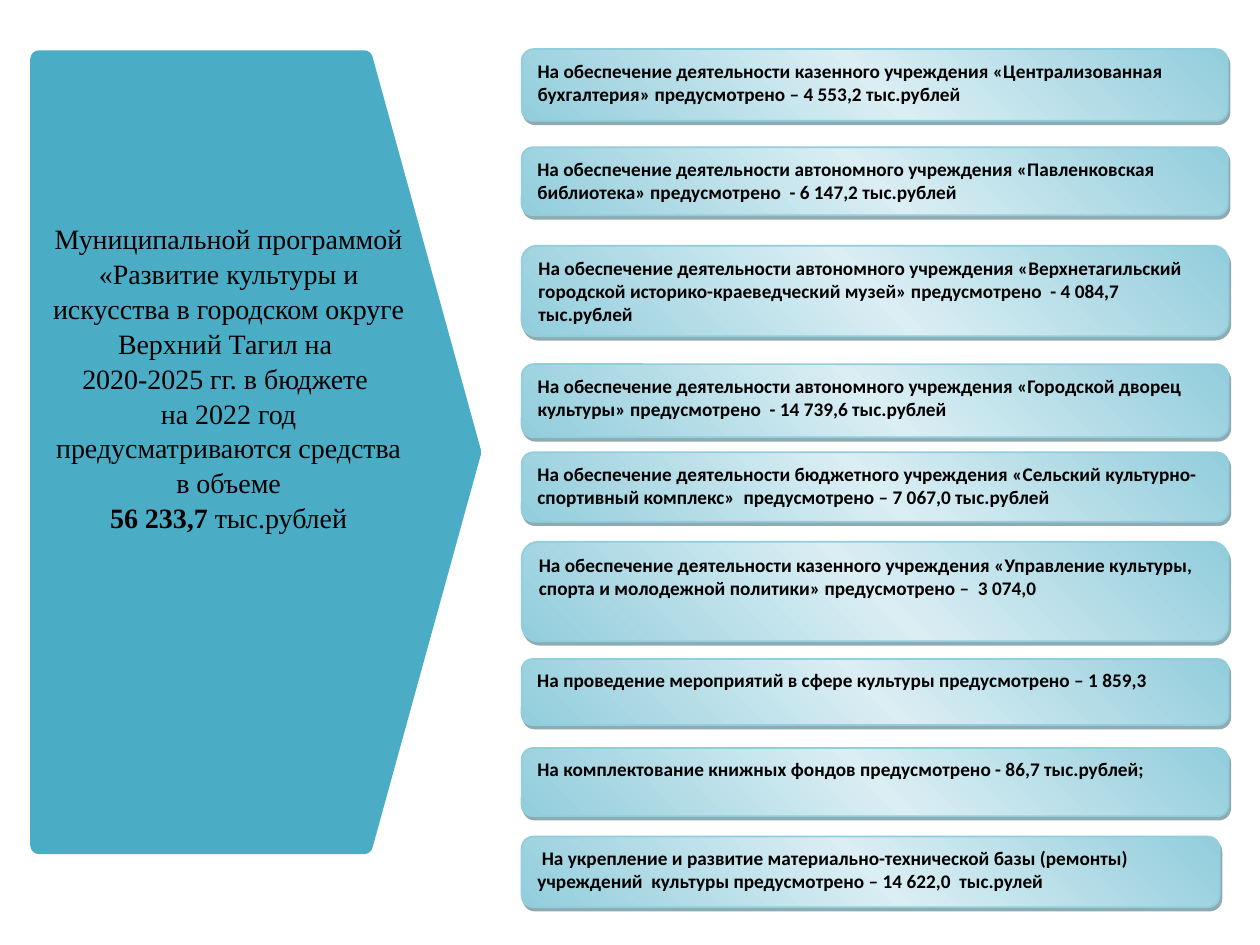
import pptx
import pptx.util
import pptx.oxml
import pptx.oxml.ns
import pptx.dml.color
import pptx.enum.shapes
import pptx.enum.text
from dataclasses import dataclass

Pt = pptx.util.Pt
Kind = pptx.enum.shapes.MSO_SHAPE
Align = pptx.enum.text.PP_ALIGN
Anchor = pptx.enum.text.MSO_ANCHOR


@dataclass
class Theme:
    plate: str = "4BACC6"
    edge: str = "92CDDC"
    glow: str = "DAEEF3"
    shade: str = "205867"
    ink: str = "000000"
    serif: str = "Times New Roman"
    sans: str = "Calibri"
    large: int = 16
    small: int = 11


theme = Theme()

total = [
    [("Муниципальной программой «Развитие культуры и искусства в городском округе Верхний Тагил на ", False)],
    [("2020-2025 гг. в бюджете ", False)],
    [("на 2022 год предусматриваются средства в объеме", False)],
    [("56 233,7 ", True), ("тыс.рублей", False)],
]

# top, height, width, text
items = [
    (28.1, 41, 403.5, "На обеспечение деятельности казенного учреждения «Централизованная бухгалтерия» предусмотрено – 4 553,2 тыс.рублей"),
    (84.2, 38.9, 403.5, "На обеспечение деятельности автономного учреждения «Павленковская библиотека» предусмотрено  - 6 147,2 тыс.рублей"),
    (140.4, 51.8, 403.9, "На обеспечение деятельности автономного учреждения «Верхнетагильский городской историко-краеведческий музей» предусмотрено  - 4 084,7 тыс.рублей"),
    (208.1, 41.8, 403.9, "На обеспечение деятельности автономного учреждения «Городской дворец культуры» предусмотрено  - 14 739,6 тыс.рублей"),
    (258.5, 39.6, 403.9, "На обеспечение деятельности бюджетного учреждения «Сельский культурно-спортивный комплекс»  предусмотрено – 7 067,0 тыс.рублей"),
    (309.6, 56.9, 403.9, "На обеспечение деятельности казенного учреждения «Управление культуры, спорта и молодежной политики» предусмотрено –  3 074,0"),
    (376.6, 37.7, 403.9, "На проведение мероприятий в сфере культуры предусмотрено – 1 859,3"),
    (427.5, 38.9, 403.9, "На комплектование книжных фондов предусмотрено - 86,7 тыс.рублей;"),
    (478.1, 40.3, 398.9, " На укрепление и развитие материально-технической базы (ремонты) учреждений  культуры предусмотрено – 14 622,0  тыс.рулей"),
]


def color(code):
    return pptx.dml.color.RGBColor.from_string(code)


def xml(tag, body):
    space = pptx.oxml.ns.nsdecls("a")
    return pptx.oxml.parse_xml(f"<a:{tag} {space}>{body}</a:{tag}>")


def add(slide, kind, box, line, width):
    shape = slide.shapes.add_shape(kind, *map(Pt, box))
    shape.shadow.inherit = False
    shape.line.color.rgb = color(line)
    shape.line.width = Pt(width)
    frame = shape.text_frame
    frame.word_wrap = True
    frame.vertical_anchor = Anchor.TOP
    return shape


def style(par, name, size, align):
    par.alignment = align
    par.font.name = name
    par.font.size = Pt(size)
    par.font.color.rgb = color(theme.ink)


def gloss(shape):
    stops = "".join(
        f'<a:gs pos="{pos}"><a:srgbClr val="{code}"/></a:gs>'
        for pos, code in ((0, theme.edge), (50000, theme.glow), (100000, theme.edge))
    )
    props = shape.element.spPr
    fill = xml("gradFill", f'<a:gsLst>{stops}</a:gsLst><a:lin ang="18900000" scaled="1"/>')
    props.insert(2, fill)
    cast = xml("outerShdw", f'<a:srgbClr val="{theme.shade}"><a:alpha val="50000"/></a:srgbClr>')
    for key, val in (("dist", Pt(2.2)), ("dir", 63 * 60000), ("algn", "ctr"), ("rotWithShape", 0)):
        cast.set(key, str(int(val)) if key != "algn" else val)
    props.find(pptx.oxml.ns.qn("a:effectLst")).append(cast)


def draw_plate(slide):
    shape = add(slide, Kind.PENTAGON, (22.3, 33.8, 247.7, 449.3), theme.plate, 10)
    shape.adjustments[0] = 0.25
    shape.fill.solid()
    shape.fill.fore_color.rgb = color(theme.plate)
    frame = shape.text_frame
    frame.margin_top = Pt(92)
    for num, parts in enumerate(total):
        par = frame.add_paragraph() if num else frame.paragraphs[0]
        style(par, theme.serif, theme.large, Align.CENTER)
        par.line_spacing = 1.04
        for text, bold in parts:
            run = par.add_run()
            run.text = text
            if bold:
                run.font.bold = True


def draw_item(slide, top, height, width, text):
    shape = add(slide, Kind.FLOWCHART_ALTERNATE_PROCESS, (298.1, top, width, height), theme.edge, 1)
    gloss(shape)
    par = shape.text_frame.paragraphs[0]
    par.text = text
    style(par, theme.sans, theme.small, Align.LEFT)
    par.font.bold = True


def main():
    deck = pptx.Presentation()
    deck.slide_width, deck.slide_height = Pt(720), Pt(540)
    slide = deck.slides.add_slide(deck.slide_layouts[6])
    draw_plate(slide)
    for item in items:
        draw_item(slide, *item)
    deck.save("out.pptx")


if __name__ == "__main__":
    main()
